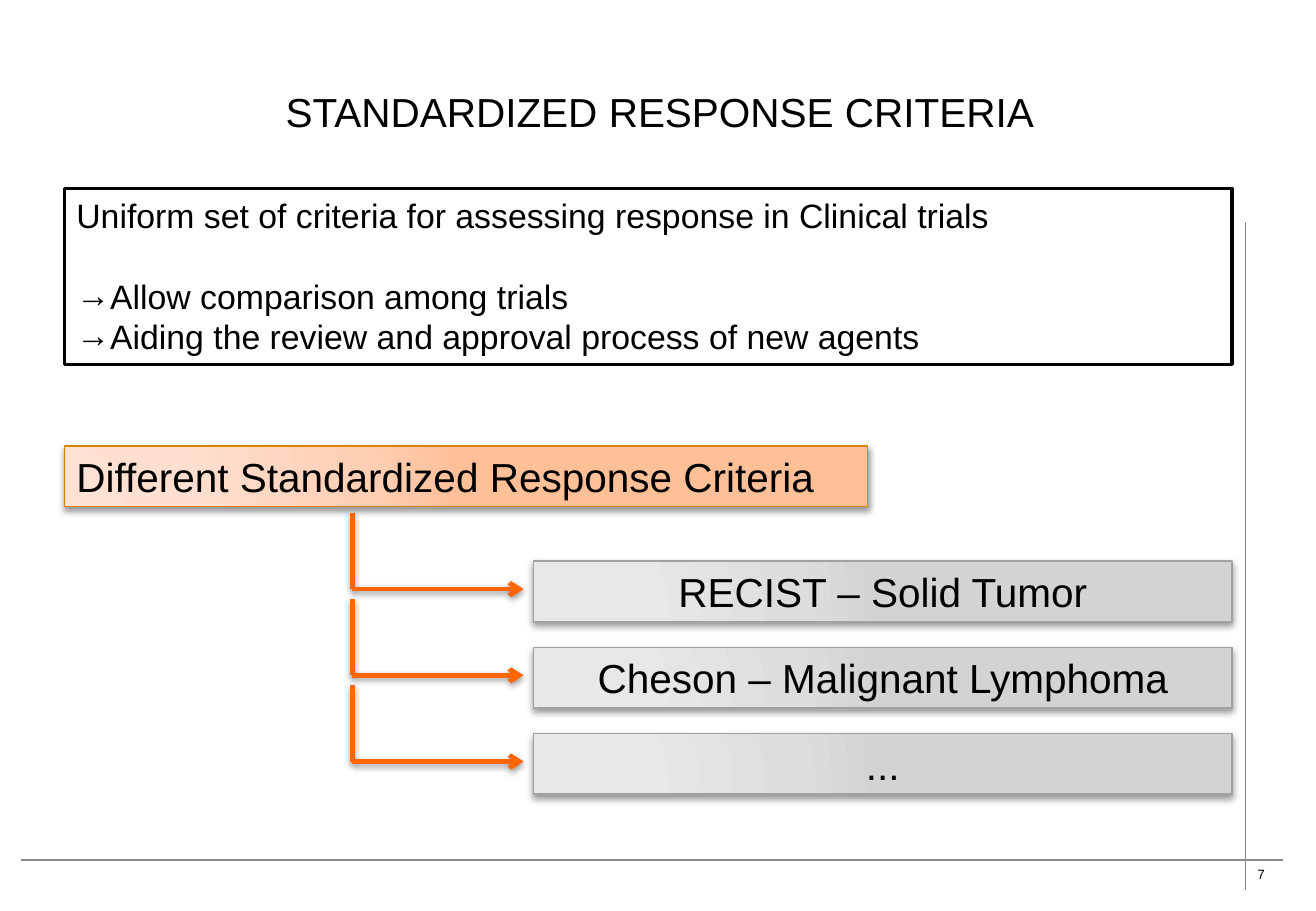
from lxml.etree import SubElement
from pptx import Presentation
from pptx.dml.color import RGBColor
from pptx.enum.shapes import MSO_CONNECTOR, MSO_SHAPE
from pptx.enum.text import MSO_ANCHOR, PP_ALIGN
from pptx.oxml.ns import qn
from pptx.util import Inches, Pt

BLACK, WHITE, ORANGE, RULE_GRAY = "000000", "FFFFFF", "FF6600", "8B8B8B"
PEACH_STOPS = ["FFE2D3", "FFDFCF", "FFCFB4", "FFBF97"]
GRAY_STOPS = ["EAEAEA", "E8E8E8", "DDDDDD", "D3D3D3"]
STOP_POSITIONS = [0, 30, 75, 100]
CRITERIA = ["RECIST – Solid Tumor", "Cheson – Malignant Lymphoma", "..."]
CRITERIA_PITCH = 0.71


def color(hex_string):
    return RGBColor.from_string(hex_string)


def add_child(parent, tag, **attributes):
    return SubElement(parent, qn(tag), {name: str(value) for name, value in attributes.items()})


def format_paragraph(paragraph, size, alignment=PP_ALIGN.LEFT):
    paragraph.alignment = alignment
    paragraph.font.size = Pt(size)
    paragraph.font.name = "Arial"
    paragraph.font.color.rgb = color(BLACK)


def set_shadow(shape, opacity=None, distance=0):
    """Replace the theme shadow by a downward one, or by none without an opacity."""
    effects = add_child(shape._element.spPr, "a:effectLst")
    if opacity:
        shadow = add_child(effects, "a:outerShdw", blurRad=Pt(4), dist=Pt(distance),
                           dir=90 * 60000, rotWithShape=0)
        shadow_color = add_child(shadow, "a:srgbClr", val=BLACK)
        add_child(shadow_color, "a:alpha", val=opacity * 1000)


def set_radial_fill(shape, stops):
    gradient = add_child(shape._element.spPr, "a:gradFill", rotWithShape=1)
    stop_list = add_child(gradient, "a:gsLst")
    for position, stop in zip(STOP_POSITIONS, stops):
        add_child(add_child(stop_list, "a:gs", pos=position * 1000), "a:srgbClr", val=stop)
    path = add_child(gradient, "a:path", path="circle")
    add_child(path, "a:fillToRect", l=5000, t=100000, r=120000, b=10000)


def add_line(slide, start, end, line_color, width):
    line = slide.shapes.add_connector(MSO_CONNECTOR.STRAIGHT, *map(Inches, start + end))
    line.line.color.rgb = color(line_color)
    line.line.width = Pt(width)
    return line


def add_rectangle(slide, left, top, width, height):
    shape = slide.shapes.add_shape(MSO_SHAPE.RECTANGLE, *map(Inches, (left, top, width, height)))
    shape.text_frame.word_wrap = True
    shape.text_frame.vertical_anchor = MSO_ANCHOR.TOP
    return shape


def add_page_frame(slide, corner_x, corner_y, page_number):
    """Draw the two thin rules that cross at the corner, and the page number beside it."""
    rules = [((0.17, corner_y), (10.56, corner_y)), ((corner_x, 7.33), (corner_x, 1.83))]
    for start, end in rules:
        set_shadow(add_line(slide, start, end, RULE_GRAY, 1))
    box = slide.shapes.add_textbox(*map(Inches, (corner_x, corner_y, 0.34, 0.23)))
    box.text_frame.word_wrap = False
    box.text_frame.text = page_number
    format_paragraph(box.text_frame.paragraphs[0], 8)


def set_title(slide, left, top, width, height, text):
    title = slide.shapes.title
    title.left, title.top, title.width, title.height = map(Inches, (left, top, width, height))
    title.text_frame.text = text
    title.text_frame.vertical_anchor = MSO_ANCHOR.MIDDLE
    format_paragraph(title.text_frame.paragraphs[0], 24)


def add_purpose_box(slide, left, top, width, height, heading, benefits):
    box = add_rectangle(slide, left, top, width, height)
    box.fill.solid()
    box.fill.fore_color.rgb = color(WHITE)
    box.line.color.rgb = color(BLACK)
    box.line.width = Pt(2)
    box.shadow.inherit = False
    frame = box.text_frame
    frame.text = heading
    format_paragraph(frame.paragraphs[0], 20)
    for index, benefit in enumerate(benefits):
        paragraph = frame.add_paragraph()
        paragraph.text = benefit
        properties = paragraph._p.get_or_add_pPr()
        add_child(properties, "a:buFont", typeface="Arial")
        add_child(properties, "a:buChar", char="→")
        format_paragraph(paragraph, 20)
        if index == 0:
            paragraph.space_before = Pt(24)


def add_banner(slide, left, top, width, text, stops, line_color, alignment):
    banner = add_rectangle(slide, left, top, width, 0.5)
    set_radial_fill(banner, stops)
    banner.line.color.rgb = color(line_color)
    banner.line.width = Pt(1)
    set_shadow(banner, 40, 2)
    banner.text_frame.text = text
    format_paragraph(banner.text_frame.paragraphs[0], 24, alignment)


def add_elbow_arrow(slide, left, top, width, height):
    corner = (left, top + height)
    stem = add_line(slide, (left, top), corner, ORANGE, 2.75)
    arrow = add_line(slide, corner, (left + width, top + height), ORANGE, 2.75)
    add_child(arrow.line._get_or_add_ln(), "a:tailEnd", type="arrow")
    for line in (stem, arrow):
        set_shadow(line, 42, 1.6)


def add_criteria_tree(slide, left, top, width):
    add_banner(slide, left, top, 6.61, "Different Standardized Response Criteria",
               PEACH_STOPS, "DA8300", PP_ALIGN.LEFT)
    for index, name in enumerate(CRITERIA):
        offset = top + index * CRITERIA_PITCH
        add_banner(slide, left + width - 5.75, offset + 0.95, 5.75, name,
                   GRAY_STOPS, "A1A1A1", PP_ALIGN.CENTER)
        add_elbow_arrow(slide, left + 2.37, offset + 0.55, 1.41, 0.63)


def main():
    presentation = Presentation()
    presentation.slide_width, presentation.slide_height = Inches(10.83), Inches(7.5)
    slide = presentation.slides.add_slide(presentation.slide_layouts[5])
    add_page_frame(slide, 10.25, 7.08, "7")
    set_title(slide, 2.25, 0.42, 7.83, 1, "STANDARDIZED RESPONSE CRITERIA")
    add_purpose_box(slide, 0.53, 1.55, 9.61, 1.45,
                    "Uniform set of criteria for assessing response in Clinical trials",
                    ["Allow comparison among trials",
                     "Aiding the review and approval process of new agents"])
    add_criteria_tree(slide, 0.53, 3.67, 9.61)
    presentation.save("out.pptx")


if __name__ == "__main__":
    main()
